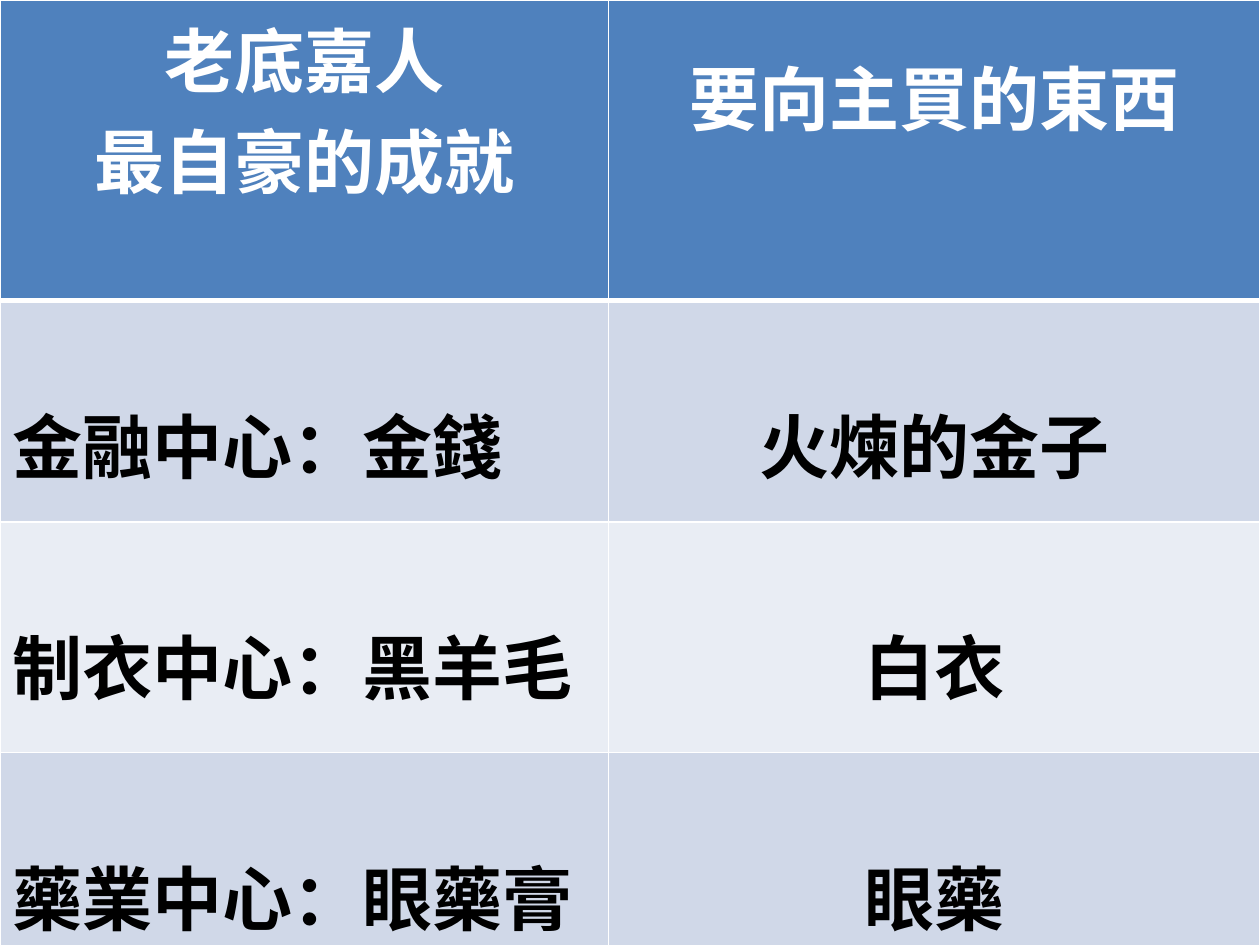
from dataclasses import dataclass

from lxml import etree
from pptx import Presentation
from pptx.dml.color import RGBColor
from pptx.enum.text import PP_ALIGN
from pptx.oxml.ns import qn
from pptx.util import Pt

LEFT, CENTER = PP_ALIGN.LEFT, PP_ALIGN.CENTER


@dataclass(frozen=True)
class Theme:
    font: str = "Calibri"
    size: float = 40
    head: str = "4F81BD"
    bands: tuple = ("D0D8E8", "E9EDF4")
    light: str = "FFFFFF"
    dark: str = "000000"
    thin: float = 1
    thick: float = 3


THEME = Theme()
COLS = (347.76, 372.24)
ROWS = (155.52, 126.72, 131.76, 126)
HEADS = ("老底嘉人\n最自豪的成就", "要向主買的東西")
PAIRS = (
    ("金融中心：金錢", "火煉的金子"),
    ("制衣中心：黑羊毛", "白衣"),
    ("藥業中心：眼藥膏", "眼藥"),
)
EDGE = 3.6
DROP = 52.4  # cell edge plus one line of Calibri at body size
HEAD_TOPS = (EDGE, 25.6)


def set_edges(cell, top, bottom):
    """Draw the four cell borders, with the given top and bottom widths."""
    props = cell._tc.get_or_add_tcPr()
    widths = {"L": THEME.thin, "R": THEME.thin, "T": top, "B": bottom}
    for spot, (side, width) in enumerate(widths.items()):
        line = etree.Element(qn(f"a:ln{side}"), w=str(Pt(width)))
        fill = etree.SubElement(line, qn("a:solidFill"))
        etree.SubElement(fill, qn("a:srgbClr"), val=THEME.light)
        props.insert(spot, line)


def fill_cell(cell, text, align, color, back, top, bottom=EDGE):
    cell.fill.solid()
    cell.fill.fore_color.rgb = RGBColor.from_string(back)
    cell.margin_top, cell.margin_bottom = Pt(top), Pt(bottom)
    cell.text_frame.text = text
    for para in cell.text_frame.paragraphs:
        para.alignment = align
        for run in para.runs:
            font = run.font
            font.name, font.size, font.bold = THEME.font, Pt(THEME.size), True
            font.color.rgb = RGBColor.from_string(color)


def add_grid(slide, left, top, width, height):
    frame = slide.shapes.add_table(
        len(ROWS), len(COLS), Pt(left), Pt(top), Pt(width), Pt(height)
    )
    table = frame.table
    for col, share in zip(table.columns, COLS):
        col.width = Pt(width * share / sum(COLS))
    for row, share in zip(table.rows, ROWS):
        row.height = Pt(height * share / sum(ROWS))

    for c, (text, drop) in enumerate(zip(HEADS, HEAD_TOPS)):
        cell = table.cell(0, c)
        fill_cell(cell, text, CENTER, THEME.light, THEME.head, drop, DROP)
        set_edges(cell, THEME.thin, THEME.thick)
    for r, pair in enumerate(PAIRS, 1):
        back = THEME.bands[(r - 1) % 2]
        for c, (text, align) in enumerate(zip(pair, (LEFT, CENTER))):
            cell = table.cell(r, c)
            fill_cell(cell, text, align, THEME.dark, back, DROP)
            set_edges(cell, THEME.thick if r == 1 else THEME.thin, THEME.thin)


def main():
    deck = Presentation()
    deck.slide_width, deck.slide_height = Pt(720), Pt(540)
    slide = deck.slides.add_slide(deck.slide_layouts[6])
    add_grid(slide, 0, 0, 720, 540)
    deck.save("out.pptx")


if __name__ == "__main__":
    main()
